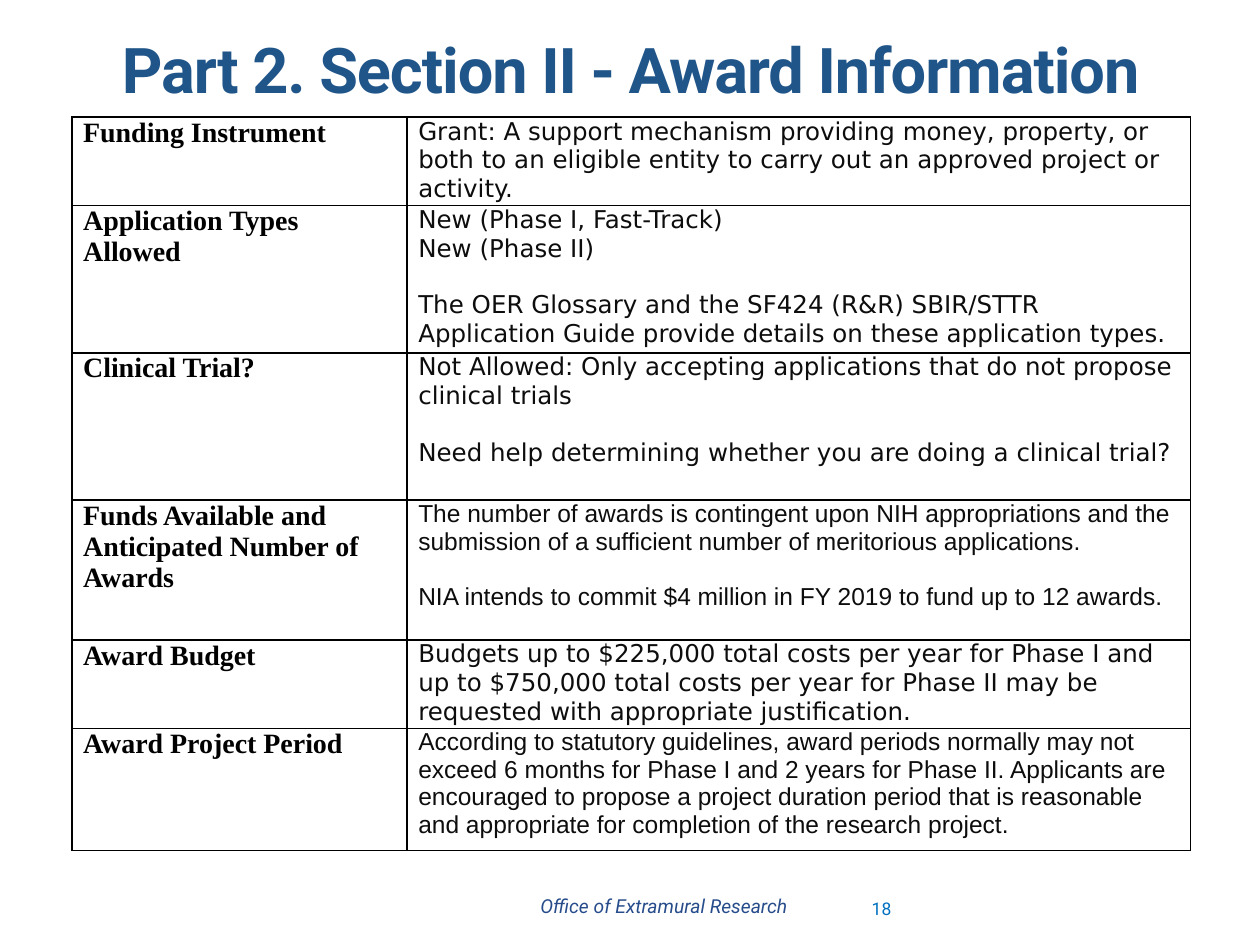
from dataclasses import dataclass

from lxml.etree import SubElement
from pptx import Presentation
from pptx.dml.color import RGBColor
from pptx.enum.text import MSO_ANCHOR as Anchor, PP_ALIGN as Align
from pptx.oxml.ns import qn
from pptx.util import Inches, Pt


@dataclass(frozen=True)
class TextStyle:
    font: str
    size: float
    color: str
    bold: bool = False
    italic: bool = False
    spacing: float = 0


class Theme:
    title = TextStyle("Roboto", 36, "20558A", bold=True, spacing=-0.6)
    footer = TextStyle("Roboto", 11, "274C8B", italic=True)
    number = TextStyle("Roboto", 10, "0070C0")
    label = TextStyle("Times New Roman", 16, "000000", bold=True)
    detail = TextStyle("DejaVu Sans", 14, "0D0D0D")
    detail_arial = TextStyle("Arial", 14, "0D0D0D")
    cell_fill = "FFFFFF"
    border = "000000"
    border_width = 1
    paragraph_gap = 16


# Each row: height, label, detail style, detail groups (a gap separates groups)
AWARD_ROWS = [
    (0.68, "Funding Instrument", Theme.detail, [
        ["Grant: A support mechanism providing money, property, or both to an "
         "eligible entity to carry out an approved project or activity."]]),
    (1.17, "Application Types Allowed", Theme.detail, [
        ["New (Phase I, Fast-Track)", "New (Phase II)"],
        ["The OER Glossary and the SF424 (R&R) SBIR/STTR Application Guide "
         "provide details on these application types."]]),
    (1.17, "Clinical Trial?", Theme.detail, [
        ["Not Allowed: Only accepting applications that do not propose clinical trials"],
        ["Need help determining whether you are doing a clinical trial?"]]),
    (1.11, "Funds Available and Anticipated Number of Awards", Theme.detail_arial, [
        ["The number of awards is contingent upon NIH appropriations and the "
         "submission of a sufficient number of meritorious applications."],
        ["NIA intends to commit $4 million in FY 2019 to fund up to 12 awards."]]),
    (0.68, "Award Budget", Theme.detail, [
        ["Budgets up to $225,000 total costs per year for Phase I and up to $750,000 "
         "total costs per year for Phase II may be requested with appropriate "
         "justification."]]),
    (0.97, "Award Project Period", Theme.detail_arial, [
        ["According to statutory guidelines, award periods normally may not exceed "
         "6 months for Phase I and 2 years for Phase II. Applicants are encouraged to "
         "propose a project duration period that is reasonable and appropriate for "
         "completion of the research project."]]),
]


class SlideBuilder:
    def __init__(self, slide, theme):
        self.slide = slide
        self.theme = theme

    def format_paragraph(self, paragraph, style):
        for run in paragraph.runs:
            font = run.font
            font.name = style.font
            font.size = Pt(style.size)
            font.bold = style.bold
            font.italic = style.italic
            font.color.rgb = RGBColor.from_string(style.color)
            if style.spacing:
                run._r.get_or_add_rPr().set("spc", str(round(style.spacing * 100)))

    def text(self, text, style, left, top, width, height,
             anchor=Anchor.TOP, align=Align.LEFT, line_spacing=1.0, bottom_inset=0.05):
        shape = self.slide.shapes.add_textbox(
            Inches(left), Inches(top), Inches(width), Inches(height))
        frame = shape.text_frame
        frame.word_wrap = True
        frame.vertical_anchor = anchor
        frame.margin_bottom = Inches(bottom_inset)
        frame.text = text
        paragraph = frame.paragraphs[0]
        paragraph.alignment = align
        paragraph.line_spacing = line_spacing
        self.format_paragraph(paragraph, style)

    def border_cell(self, cell):
        properties = cell._tc.get_or_add_tcPr()
        for side in ("lnL", "lnR", "lnT", "lnB"):
            line = SubElement(properties, qn(f"a:{side}"),
                              w=str(Pt(self.theme.border_width)))
            fill = SubElement(line, qn("a:solidFill"))
            SubElement(fill, qn("a:srgbClr"), val=self.theme.border)

    def fill_cell(self, cell, groups, style):
        cell.margin_left = cell.margin_right = Inches(0.09)
        cell.margin_top = cell.margin_bottom = 0
        self.border_cell(cell)
        cell.fill.solid()
        cell.fill.fore_color.rgb = RGBColor.from_string(self.theme.cell_fill)
        frame = cell.text_frame
        frame.text = "\n".join(line for group in groups for line in group)
        for paragraph in frame.paragraphs:
            self.format_paragraph(paragraph, style)
        start = 0
        for group in groups[:-1]:
            start += len(group)
            frame.paragraphs[start].space_before = Pt(self.theme.paragraph_gap)

    def table(self, rows, left, top, column_widths):
        height = sum(row[0] for row in rows)
        table = self.slide.shapes.add_table(
            len(rows), len(column_widths), Inches(left), Inches(top),
            Inches(sum(column_widths)), Inches(height)).table
        table.first_row = table.horz_banding = False
        for column, width in zip(table.columns, column_widths):
            column.width = Inches(width)
        for index, (row_height, label, style, groups) in enumerate(rows):
            table.rows[index].height = Inches(row_height)
            self.fill_cell(table.cell(index, 0), [[label]], self.theme.label)
            self.fill_cell(table.cell(index, 1), groups, style)


def main():
    presentation = Presentation()
    presentation.slide_width = Inches(10)
    presentation.slide_height = Inches(7.5)
    slide = presentation.slides.add_slide(presentation.slide_layouts[6])
    builder = SlideBuilder(slide, Theme)
    builder.text("Office of Extramural Research", Theme.footer, 4.19, 7.05, 2.79, 0.29)
    builder.text("Part 2. Section II - Award Information", Theme.title,
                 0.17, 0.17, 9.67, 0.82, Anchor.MIDDLE, Align.CENTER, line_spacing=0.9)
    builder.text("18", Theme.number, 6.82, 6.94, 1.35, 0.35,
                 Anchor.BOTTOM, bottom_inset=0)
    builder.table(AWARD_ROWS, 0.57, 0.93, (2.66, 6.22))
    presentation.save("out.pptx")


if __name__ == "__main__":
    main()
